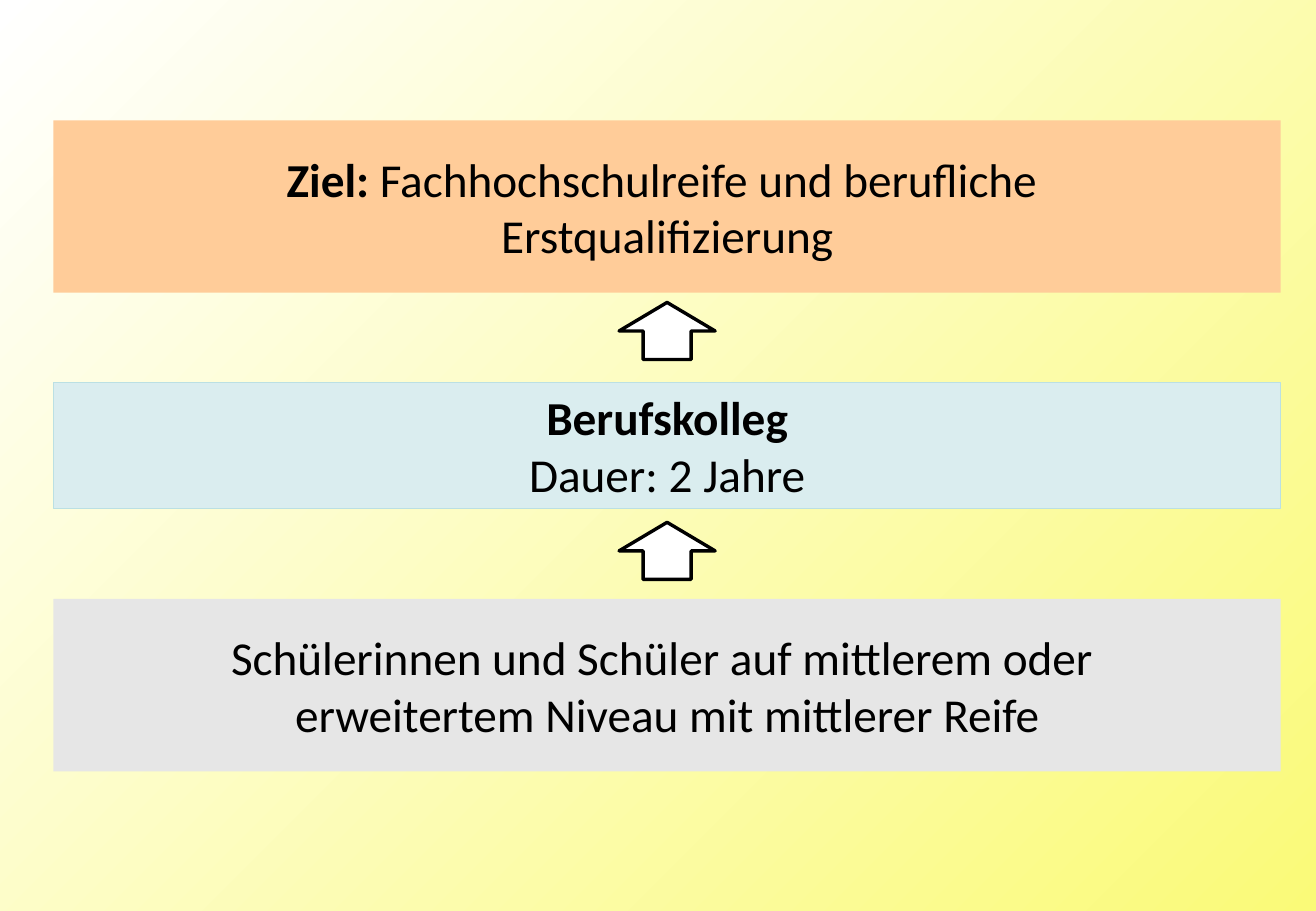
from dataclasses import dataclass

from pptx import Presentation
from pptx.dml.color import RGBColor
from pptx.enum.shapes import MSO_SHAPE
from pptx.enum.text import MSO_ANCHOR, MSO_AUTO_SIZE, PP_ALIGN
from pptx.util import Inches, Pt

RECT, ARROW = MSO_SHAPE.RECTANGLE, MSO_SHAPE.RIGHT_ARROW
TOP, MIDDLE = MSO_ANCHOR.TOP, MSO_ANCHOR.MIDDLE
NO_FIT, GROW = MSO_AUTO_SIZE.NONE, MSO_AUTO_SIZE.SHAPE_TO_FIT_TEXT
CENTER = PP_ALIGN.CENTER


@dataclass(frozen=True)
class Theme:
    """Colours and type of the slide."""
    font: str = "Calibri"
    size: int = 28
    text: str = "000000"
    goal: str = "FFCC99"
    school: str = "DAEDEF"
    school_line: str = "BBE0E3"
    pupils: str = "E6E6E6"
    arrow: str = "FFFFFF"
    background: tuple = ("FFFFFF", "FAFA78")


THEME = Theme()
GOAL = [[("Ziel:", True), (" Fachhochschulreife und berufliche ", False)],
        [("Erstqualifizierung", False)]]
PUPILS = [[("Schülerinnen und Schüler auf mittlerem oder ", False)],
          [("erweitertem Niveau mit mittlerer Reife", False)]]
SCHOOL = [[("Berufskolleg", True)], [("Dauer: 2 Jahre", False)]]

BOX_LEFT, BOX_WIDTH = 0.44, 10.1
BOXES = [
    dict(lines=GOAL, top=0.99, height=1.42, fill=THEME.goal, title=True),
    dict(lines=PUPILS, top=4.93, height=1.42, fill=THEME.pupils),
    dict(lines=SCHOOL, top=3.15, height=1.04, fill=THEME.school,
         line=THEME.school_line, anchor=TOP, fit=GROW),
]
ARROW_TOPS = [4.14, 2.33]
ARROW_WIDTH, ARROW_HEIGHT = 0.47, 0.79


def rgb(value):
    """Turn a hex string into a colour."""
    return RGBColor.from_string(value)


def paint(sp, fill, line=None, width=0.75):
    """Set fill and outline of a shape."""
    sp.shadow.inherit = False
    sp.fill.solid()
    sp.fill.fore_color.rgb = rgb(fill)
    if line:
        sp.line.color.rgb = rgb(line)
        sp.line.width = Pt(width)
    else:
        sp.line.fill.background()


def write(tf, lines, use_breaks):
    """Write the lines as paragraphs, or as one paragraph with breaks."""
    p = tf.paragraphs[0]
    for i, runs in enumerate(lines):
        if i and use_breaks:
            p.add_line_break()
        elif i:
            p = tf.add_paragraph()
        p.alignment = CENTER
        for text, bold in runs:
            r = p.add_run()
            r.text = text
            style = dict(name=THEME.font, size=Pt(THEME.size), bold=bold)
            for key, value in style.items():
                setattr(r.font, key, value)
            r.font.color.rgb = rgb(THEME.text)


def add_box(s, lines, top, height, fill, line=None, title=False,
            anchor=MIDDLE, fit=NO_FIT):
    """Place one text box of the stack."""
    at = dict(left=Inches(BOX_LEFT), top=Inches(top),
              width=Inches(BOX_WIDTH), height=Inches(height))
    if title:
        sp = s.shapes.title
        for key, value in at.items():
            setattr(sp, key, value)
        sp.fill.solid()
    else:
        sp = s.shapes.add_shape(RECT, **at)
    paint(sp, fill, line)
    tf = sp.text_frame
    for key, value in dict(word_wrap=True, auto_size=fit,
                           vertical_anchor=anchor).items():
        setattr(tf, key, value)
    write(tf, lines, title)


def add_arrow(s, top):
    """Place one upward arrow on the centre line of the boxes."""
    left = BOX_LEFT + (BOX_WIDTH - ARROW_WIDTH) / 2
    sp = s.shapes.add_shape(ARROW, Inches(left), Inches(top),
                            Inches(ARROW_WIDTH), Inches(ARROW_HEIGHT))
    sp.rotation = 270
    paint(sp, THEME.arrow, THEME.text, 2)


def main():
    """Build and save the slide."""
    prs = Presentation()
    prs.slide_width, prs.slide_height = Inches(10.83), Inches(7.5)
    s = prs.slides.add_slide(prs.slide_layouts[5])
    fill = s.background.fill
    fill.gradient()
    fill.gradient_angle = 315
    for stop, color, position in zip(fill.gradient_stops, THEME.background, (0, 1)):
        stop.color.rgb = rgb(color)
        stop.position = position
    for box in BOXES:
        add_box(s, **box)
    for top in ARROW_TOPS:
        add_arrow(s, top)
    prs.save("out.pptx")


if __name__ == "__main__":
    main()
